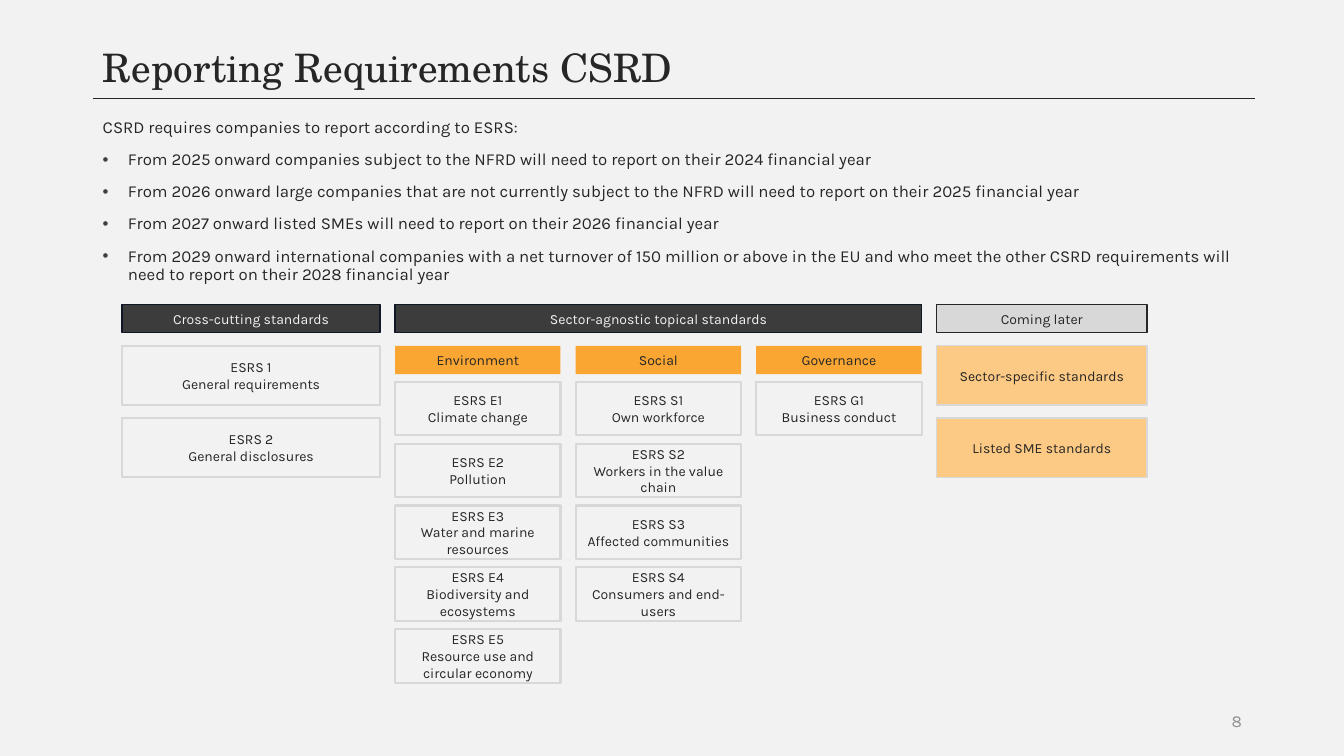
"""Build the slide on CSRD reporting requirements and the ESRS standards."""
from dataclasses import dataclass
from typing import Any, Optional

from lxml.etree import SubElement as Sub
from pptx import Presentation
from pptx.dml.color import RGBColor as Rgb
from pptx.enum.shapes import MSO_CONNECTOR as Conn, MSO_SHAPE as Form
from pptx.enum.text import MSO_ANCHOR as Anchor, MSO_AUTO_SIZE as Fit, PP_ALIGN as Align
from pptx.oxml.ns import qn
from pptx.util import Pt


@dataclass(frozen=True)
class Theme:
    back: str = "F2F2F2"
    ink: str = "262626"
    dot: str = "3F3F3F"
    dark: str = "3C3C3C"
    edge: str = "101724"
    grey: str = "D8D8D8"
    gold: str = "FAA632"
    pale: str = "FCCA84"
    mute: str = "8E8E8E"
    head: str = "TeX Gyre Schola"
    body: str = "Karla"
    big: float = 28
    mid: float = 12
    small: float = 10


T = Theme()


@dataclass(frozen=True)
class Style:
    fill: Optional[str] = None
    line: Optional[str] = None
    width: float = 1
    ink: str = T.ink


@dataclass(frozen=True)
class Box:
    text: str
    left: float
    top: float
    wide: float
    high: float
    style: Style


@dataclass(frozen=True)
class Stack:
    left: float
    top: float
    wide: float
    high: float
    step: float
    style: Style
    items: tuple[str, ...]

    def boxes(self) -> list[Box]:
        return [Box(text, self.left, self.top + i * self.step, self.wide, self.high, self.style)
                for i, text in enumerate(self.items)]


DARK = Style(T.dark, T.edge, ink=T.back)
LATER = Style(T.grey, T.ink)
GOLD = Style(T.gold)
CARD = Style(None, T.grey, 1.5)
PALE = Style(T.pale, T.grey)

HEAD_Y, ROW_Y, CARD_Y = 217.4, 247, 272.8
BAR, TALL, TALL_STEP, LOW, LOW_STEP = 20.2, 42.4, 51.6, 38.2, 44.15
CROSS_X, CROSS_W = 87.1, 184.4
TOPIC_X, TOPIC_W, TOPIC_STEP = 282.2, 118.2, 129
LATER_X, LATER_W = 668.8, 150.6

HEADS = (
    Box("Cross-cutting standards", CROSS_X, HEAD_Y, CROSS_W, BAR, DARK),
    Box("Sector-agnostic topical standards", TOPIC_X, HEAD_Y,
        2 * TOPIC_STEP + TOPIC_W, BAR, DARK),
    Box("Coming later", LATER_X, HEAD_Y, LATER_W, BAR, LATER),
)
SIDES = (
    Stack(CROSS_X, ROW_Y, CROSS_W, TALL, TALL_STEP, CARD,
          ("ESRS 1\nGeneral requirements", "ESRS 2\nGeneral disclosures")),
    Stack(LATER_X, ROW_Y, LATER_W, TALL, TALL_STEP, PALE,
          ("Sector-specific standards", "Listed SME standards")),
)
TOPICS = {
    "Environment": ("ESRS E1\nClimate change", "ESRS E2\nPollution",
                    "ESRS E3\nWater and marine resources",
                    "ESRS E4\nBiodiversity and ecosystems",
                    "ESRS E5\nResource use and circular economy"),
    "Social": ("ESRS S1\nOwn workforce", "ESRS S2\nWorkers in the value chain",
               "ESRS S3\nAffected communities", "ESRS S4\nConsumers and end-users"),
    "Governance": ("ESRS G1\nBusiness conduct",),
}
LEAD = "CSRD requires companies to report according to ESRS:"
DATES = (
    "From 2025 onward companies subject to the NFRD will need to report on their 2024 financial year",
    "From 2026 onward large companies that are not currently subject to the NFRD "
    "will need to report on their 2025 financial year",
    "From 2027 onward listed SMEs will need to report on their 2026 financial year",
    "From 2029 onward international companies with a net turnover of 150 million or above in the EU "
    "and who meet the other CSRD requirements will need to report on their 2028 financial year",
)


def put(item: Any, vals: dict[str, Any]) -> None:
    for name, val in vals.items():
        setattr(item, name, val)


def place(shape: Any, left: float, top: float, wide: float, high: float) -> None:
    put(shape, {"left": Pt(left), "top": Pt(top), "width": Pt(wide), "height": Pt(high)})


def write(shape: Any, text: str, size: float, ink: str, face: str = T.body,
          align: Any = Align.LEFT, anchor: Any = Anchor.MIDDLE, lead: float = 1) -> None:
    frame = shape.text_frame
    frame.text = text
    put(frame, {"word_wrap": True, "auto_size": Fit.NONE, "vertical_anchor": anchor})
    for para in frame.paragraphs:
        put(para, {"alignment": align, "line_spacing": lead, "space_before": Pt(0)})
        for run in para.runs:
            put(run.font, {"name": face, "size": Pt(size)})
            run.font.color.rgb = Rgb.from_string(ink)


def bullet(para: Any, mark: bool) -> None:
    props = para._p.get_or_add_pPr()
    put(para, {"space_before": Pt(10 if mark else 0)})
    props.set("marL", str(Pt(18 if mark else 0)))
    props.set("indent", str(Pt(-18 if mark else 0)))
    if mark:
        Sub(Sub(props, qn("a:buClr")), qn("a:srgbClr"), val=T.dot)
        Sub(props, qn("a:buFont"), typeface="Arial")
        Sub(props, qn("a:buChar"), char="•")
    else:
        Sub(props, qn("a:buNone"))


def draw(slide: Any, box: Box) -> None:
    shape = slide.shapes.add_shape(
        Form.RECTANGLE, Pt(box.left), Pt(box.top), Pt(box.wide), Pt(box.high))
    shape.shadow.inherit = False
    for part, tint in ((shape.fill, box.style.fill), (shape.line.fill, box.style.line)):
        if tint:
            part.solid()
            part.fore_color.rgb = Rgb.from_string(tint)
        else:
            part.background()
    if box.style.line:
        shape.line.width = Pt(box.style.width)
    write(shape, box.text, T.small, box.style.ink, align=Align.CENTER)


def rule(slide: Any) -> None:
    line = slide.shapes.add_connector(Conn.STRAIGHT, Pt(66.2), Pt(70.4), Pt(896.4), Pt(70.4))
    line.line.color.rgb = Rgb.from_string(T.ink)
    line.line.width = Pt(1)
    Sub(line._element.spPr, qn("a:effectLst"))


def main() -> None:
    deck = Presentation()
    put(deck, {"slide_width": Pt(960), "slide_height": Pt(540)})
    slide = deck.slides.add_slide(deck.slide_layouts[1])
    slide.background.fill.solid()
    slide.background.fill.fore_color.rgb = Rgb.from_string(T.back)
    rule(slide)

    title, body = slide.shapes.title, slide.placeholders[1]
    place(title, 66.2, 28.8, 828, 42.5)
    write(title, "Reporting Requirements CSRD", T.big, T.ink, T.head, lead=0.9)
    place(body, 66.2, 81.4, 828, 375.8)
    write(body, "\n".join((LEAD, *DATES)), T.mid, T.ink, anchor=Anchor.TOP, lead=0.9)
    for i, para in enumerate(body.text_frame.paragraphs):
        bullet(para, i > 0)

    page = slide.shapes.add_textbox(Pt(678.2), Pt(500.4), Pt(216), Pt(28.8))
    write(page, "8", T.mid, T.mute, align=Align.RIGHT)

    stacks = list(SIDES)
    for i, (name, items) in enumerate(TOPICS.items()):
        left = TOPIC_X + i * TOPIC_STEP
        stacks += [Stack(left, ROW_Y, TOPIC_W, BAR, 0, GOLD, (name,)),
                   Stack(left, CARD_Y, TOPIC_W, LOW, LOW_STEP, CARD, items)]
    for box in (*HEADS, *(box for stack in stacks for box in stack.boxes())):
        draw(slide, box)
    deck.save("out.pptx")


if __name__ == "__main__":
    main()
